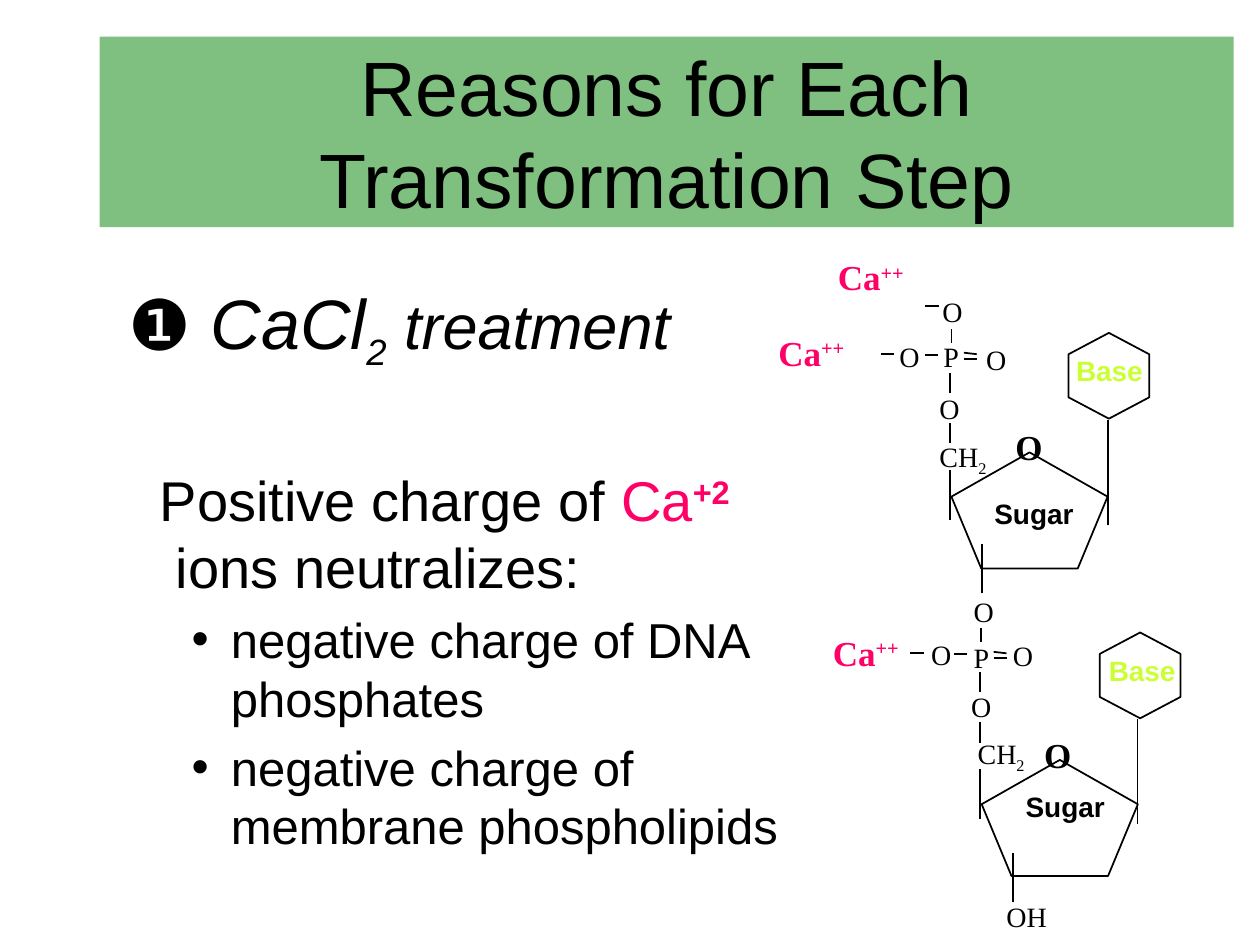
from lxml import etree
from pptx import Presentation
from pptx import util as u
from pptx.dml.color import RGBColor
from pptx.enum import shapes, text
from pptx.oxml.ns import qn

COLORS = {"ink": "000000", "band": "008000", "paper": "FFFFFF",
          "calcium": "FF0066", "base": "CCFF33"}
SANS, SERIF = "Arial", "Times New Roman"


def add_span(para, words, size, font=SANS, color="ink", bold=False, italic=False, baseline=0):
    span = para.add_run()
    span.text = words
    span.font.size = u.Pt(size)
    span.font.name = font
    span.font.bold = bold
    span.font.italic = italic
    span.font.color.rgb = RGBColor.from_string(COLORS[color])
    if baseline:
        span.font._element.set("baseline", str(baseline * 1000))


def set_bullet(para, margin, indent, bullet=None):
    props = para._p.get_or_add_pPr()
    props.set("marL", str(u.Cm(margin)))
    props.set("indent", str(u.Cm(indent)))
    if bullet:
        etree.SubElement(props, qn("a:buChar")).set("char", bullet)
    else:
        etree.SubElement(props, qn("a:buNone"))


deck = Presentation()
deck.slide_width, deck.slide_height = u.Cm(25.4), u.Cm(19.05)
page = deck.slides.add_slide(deck.slide_layouts[1])
title, body = page.placeholders

for holder, place, fill in [(title, (2.01, 0.74, 22.86, 3.84), "band"),
                            (body, (2.34, 5.51, 13.77, 13.54), "paper")]:
    holder.left, holder.top, holder.width, holder.height = map(u.Cm, place)
    holder.fill.solid()
    holder.fill.fore_color.rgb = RGBColor.from_string(COLORS[fill])
    holder.text_frame.auto_size = text.MSO_AUTO_SIZE.NONE
    holder.text_frame.word_wrap = True

band_color = title.fill._xPr.find(".//" + qn("a:srgbClr"))
etree.SubElement(band_color, qn("a:alpha")).set("val", "50000")
title.text_frame.vertical_anchor = text.MSO_ANCHOR.MIDDLE
title.text_frame.margin_top = title.text_frame.margin_bottom = u.Cm(0.51)
para = title.text_frame.paragraphs[0]
para.alignment = text.PP_ALIGN.CENTER
add_span(para, "Reasons for Each Transformation Step", 44)

para = body.text_frame.paragraphs[0]
set_bullet(para, 0.95, -0.95, "❶")
add_span(para, " CaCl", 40, italic=True)
add_span(para, "2", 36, italic=True, baseline=-25)
add_span(para, " treatment", 36, italic=True)

para = body.text_frame.add_paragraph()
para.space_before = u.Pt(53)
set_bullet(para, 0.95, -0.32)
add_span(para, "Positive charge of ", 32)
add_span(para, "Ca", 32, color="calcium")
add_span(para, "+2", 32, color="calcium", bold=True, baseline=30)
add_span(para, " ions neutralizes:", 32)

for target in ["DNA phosphates", "membrane phospholipids"]:
    para = body.text_frame.add_paragraph()
    para.level = 1
    set_bullet(para, 2.06, -0.79, "•")
    add_span(para, "negative charge of " + target, 28)

outlines = [
    (shapes.MSO_SHAPE.HEXAGON, 1.73, 1.63, [(21.49, 6.76), (22.12, 12.8)]),
    (shapes.MSO_SHAPE.REGULAR_PENTAGON, 3.15, 2.34, [(19.18, 9.12), (19.79, 15.32)]),
]
for kind, width, height, places in outlines:
    for left, top in places:
        ring = page.shapes.add_shape(kind, u.Cm(left), u.Cm(top), u.Cm(width), u.Cm(height))
        ring.shadow.inherit = False
        ring.fill.background()
        ring.line.color.rgb = RGBColor.from_string(COLORS["ink"])
        ring.line.width = u.Pt(1)
        if kind == shapes.MSO_SHAPE.HEXAGON:
            ring.rotation = 270
            ring.adjustments[0] = 0.265

unit_bonds = [
    (18.9, 7.16, 18.64, 7.16),
    (19.18, 6.91, 19.18, 6.63),
    (19.15, 10.49, 19.15, 9.47),
    (19.15, 8.94, 19.15, 8.53),
    (19.15, 7.92, 19.15, 7.52),
    (19.69, 7.14, 19.43, 7.11),
    (19.69, 7.24, 19.43, 7.24),
    (18.03, 7.14, 17.75, 7.14),
    (22.33, 10.59, 22.33, 8.46),
]
bonds = [(x1 + dx, y1 + dy, x2 + dx, y2 + dy)
         for dx, dy in [(0, 0), (0.6, 6.03)] for x1, y1, x2, y2 in unit_bonds]
bonds += [(18.92, 6.17, 18.64, 6.17), (19.79, 11.96, 19.79, 10.97), (20.42, 18.19, 20.42, 17.2)]
for ends in bonds:
    bond = page.shapes.add_connector(shapes.MSO_CONNECTOR.STRAIGHT, *map(u.Cm, ends))
    bond.line.color.rgb = RGBColor.from_string(COLORS["ink"])
    bond.line.width = u.Pt(1)
    etree.SubElement(bond._element.spPr, qn("a:effectLst"))

labels = [
    ("O", "", 0, 16, SERIF, "ink", False, 0.89,
     [(18.69, 7.77), (19.63, 6.78), (18.75, 5.82), (17.88, 6.73),
      (19.33, 13.77), (19.38, 11.86), (18.52, 12.73), (20.17, 12.75)]),
    ("P", "", 0, 16, SERIF, "ink", False, 0.89, [(18.77, 6.73), (19.38, 12.78)]),
    ("CH", "2", -25, 16, SERIF, "ink", False, 1.57, [(18.69, 8.74), (19.46, 14.73)]),
    ("OH", "", 0, 16, SERIF, "ink", False, 2.16, [(20.04, 18.01)]),
    ("O", "", 0, 20, SERIF, "ink", True, 0.89, [(20.22, 8.46), (20.8, 14.66)]),
    ("Ca", "++", 30, 20, SERIF, "calcium", True, 2.11,
     [(16.64, 5.03), (15.44, 6.55), (16.54, 12.6)]),
    ("Base", "", 0, 16, SANS, "base", True, 1.85, [(21.44, 7.01), (22.1, 13.06)]),
    ("Sugar", "", 0, 16, SANS, "ink", True, 2.11, [(19.79, 9.88), (20.42, 15.8)]),
]
for words, script, baseline, size, font, color, bold, width, places in labels:
    for left, top in places:
        height = 1.09 if size == 20 else 0.94
        box = page.shapes.add_textbox(u.Cm(left), u.Cm(top), u.Cm(width), u.Cm(height))
        box.text_frame.word_wrap = font == SERIF
        para = box.text_frame.paragraphs[0]
        para.alignment = text.PP_ALIGN.LEFT if font == SERIF else text.PP_ALIGN.CENTER
        add_span(para, words, size, font, color, bold)
        if script:
            add_span(para, script, size, font, color, bold, baseline=baseline)

deck.save("out.pptx")
